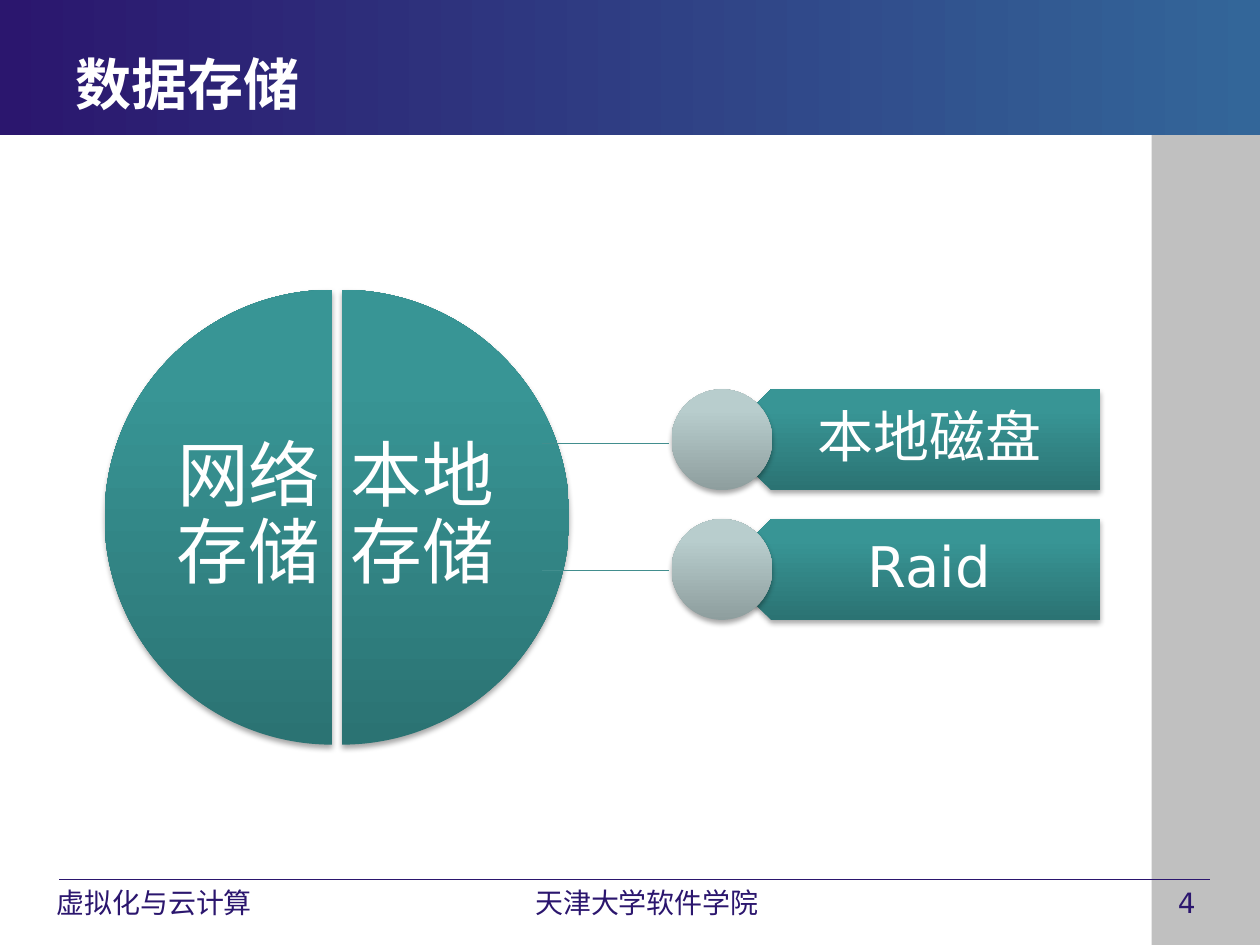
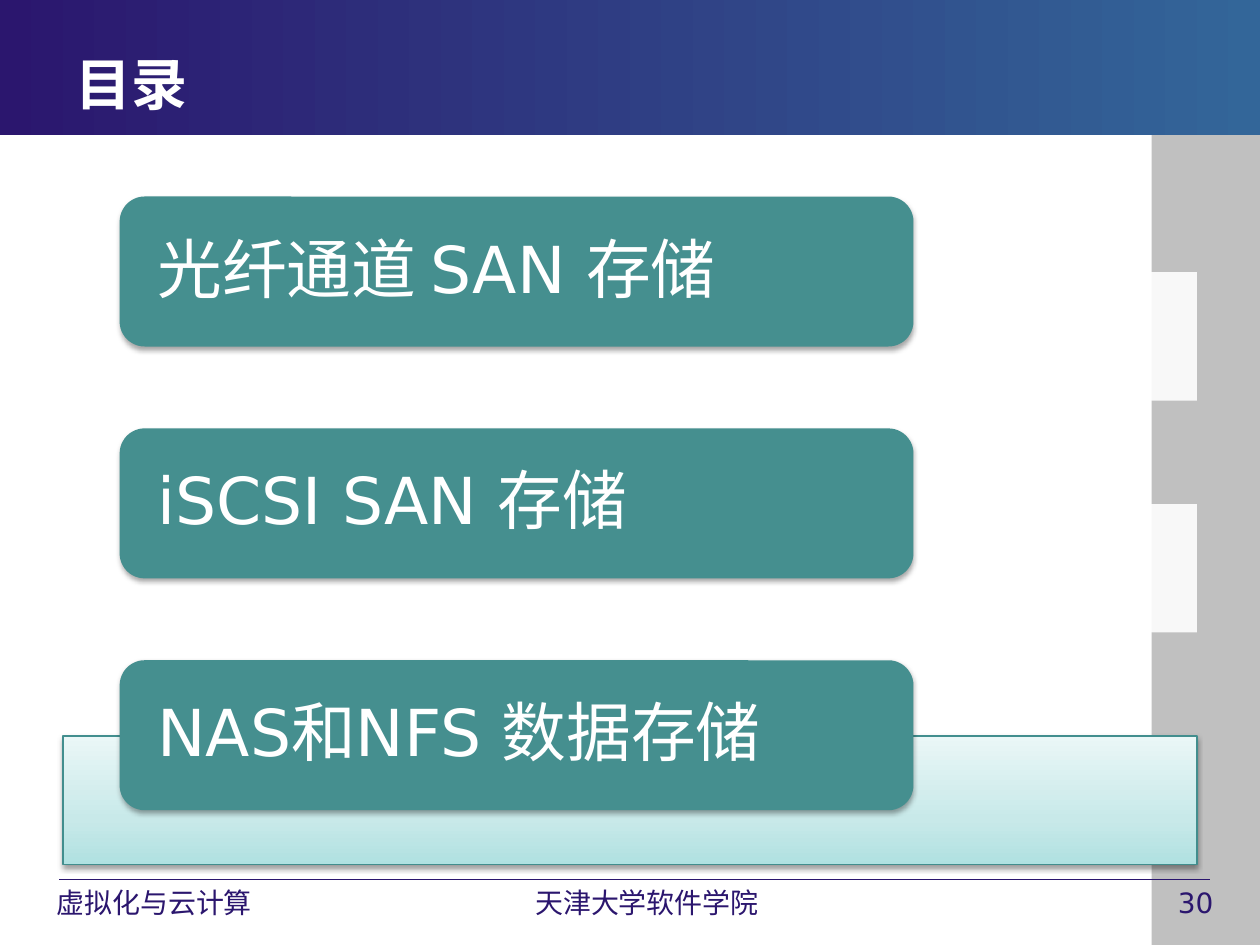
from lxml import etree
from pptx import Presentation
from pptx import util as u
from pptx.dml.color import RGBColor
from pptx.enum import shapes, text
from pptx.oxml import ns

COLORS = {
    "navy": "2B166E", "steel": "336699", "gray": "C0C0C0", "white": "FFFFFF",
    "teal": "458F8F", "teal_line": "428E8E", "black": "000000",
}
BAND_STOPS = [(0, COLORS["navy"]), (100, COLORS["steel"])]
TEAL_STOPS = [(0, "2B7373"), (80, "389595"), (100, "379898")]
SILVER_STOPS = [(0, "8E9E9E"), (80, "B8CDCD"), (100, "B9CECE")]
PALE_STOPS = [(0, "B0E1E1"), (35, "C8E9E9"), (100, "EAF7F7")]
FONT = "DejaVu Sans"
KIND = shapes.MSO_SHAPE
CENTER = text.PP_ALIGN.CENTER


def inches(*lengths):
    """Turn plain numbers into Inches."""
    return [u.Inches(length) for length in lengths]


def color(hex_color):
    """Turn a hex string into an RGB colour."""
    return RGBColor.from_string(hex_color)


def add_color(parent, hex_color, alpha=None):
    """Append a colour element, optionally with an opacity in percent."""
    element = etree.SubElement(parent, ns.qn("a:srgbClr"), val=hex_color)
    if alpha is not None:
        etree.SubElement(element, ns.qn("a:alpha"), val=str(alpha * 1000))


def set_gradient(shape, stops, angle):
    """Fill a shape with a linear gradient of any number of stops."""
    shape.fill.gradient()
    gradient = shape.element.spPr.find(ns.qn("a:gradFill"))
    stop_list = gradient.find(ns.qn("a:gsLst"))
    for stop in list(stop_list):
        stop_list.remove(stop)
    for position, hex_color in stops:
        stop = etree.SubElement(stop_list, ns.qn("a:gs"), pos=str(position * 1000))
        add_color(stop, hex_color)
    gradient.find(ns.qn("a:lin")).set("ang", str(angle * 60000))


def add_shadow(shape, alpha=35, distance=1.8):
    """Give a shape a soft shadow that falls straight down."""
    effects = shape.element.spPr.find(ns.qn("a:effectLst"))
    shadow = etree.SubElement(
        effects, ns.qn("a:outerShdw"), blurRad=str(u.Pt(3.1)), dist=str(u.Pt(distance)),
        dir="5400000", rotWithShape="0")
    add_color(shadow, COLORS["black"], alpha)


def add_block(slide, kind, box, fill, angle=270, shadow=True):
    """Add a shape without outline, filled with one colour or a list of stops."""
    shape = slide.shapes.add_shape(kind, *inches(*box))
    shape.shadow.inherit = False
    shape.line.fill.background()
    if isinstance(fill, str):
        shape.fill.solid()
        shape.fill.fore_color.rgb = color(fill)
    else:
        set_gradient(shape, fill, angle)
    if shadow:
        add_shadow(shape)
    return shape


def add_line(slide, start, end, hex_color):
    """Add a thin straight line."""
    line = slide.shapes.add_connector(shapes.MSO_CONNECTOR.STRAIGHT, *inches(*start, *end))
    line.line.color.rgb = color(hex_color)
    line.line.width = u.Pt(0.75)
    etree.SubElement(line.element.spPr, ns.qn("a:effectLst"))


def add_text(slide, box, words, size, hex_color=COLORS["white"], align=None, bold=False,
             middle=True, insets=(0.1, 0.05, 0.1, 0.05), spacing=None):
    """Add a wrapped text box with one run."""
    frame = slide.shapes.add_textbox(*inches(*box)).text_frame
    frame.word_wrap = True
    frame.vertical_anchor = text.MSO_ANCHOR.MIDDLE if middle else text.MSO_ANCHOR.TOP
    (frame.margin_left, frame.margin_top,
     frame.margin_right, frame.margin_bottom) = inches(*insets)
    paragraph = frame.paragraphs[0]
    paragraph.alignment = align
    paragraph.line_spacing = spacing
    run = paragraph.add_run()
    run.text = words
    run.font.name = FONT
    run.font.size = u.Pt(size)
    run.font.bold = bold
    run.font.color.rgb = color(hex_color)


def add_footer(slide, top, number):
    """Add the footer rule, course, school and page number."""
    add_line(slide, (0.47, top), (9.6, top), COLORS["navy"])
    for left, width, words, align in [
        (9.25, 0.71, str(number), None),
        (0.28, 1.94, "虚拟化与云计算 ", CENTER),
        (4.01, 2.25, "天津大学软件学院", CENTER),
    ]:
        add_text(slide, (left, top, width, 0.35), words, 16, COLORS["navy"], align, middle=False)


def add_base_slide(presentation, title, number):
    """Add a slide with the side band, title band and footer."""
    slide = presentation.slides.add_slide(presentation.slide_layouts[6])
    add_block(slide, KIND.RECTANGLE, (9.14, 1.07, 0.86, 6.43), COLORS["gray"], shadow=False)
    add_block(slide, KIND.RECTANGLE, (0, 0, 10, 1.07), BAND_STOPS, 0, shadow=False)
    add_footer(slide, 6.98, number)
    add_text(slide, (0.5, 0.35, 6.75, 0.62), title, 32, bold=True)
    return slide


def add_split_circle(slide, left, top, size, halves):
    """Add two facing half circles, each with its label."""
    for offset, angles, label_offset, label in halves:
        half = add_block(slide, KIND.PIE, (left + offset, top, size, size), TEAL_STOPS)
        half.adjustments[0], half.adjustments[1] = angles
        add_text(slide, (left + label_offset, top + 0.53, 1.27, 2.54), label, 41,
                 align=CENTER, insets=(0.06,) * 4, spacing=0.9)


def add_branch(slide, left, top, label):
    """Add a left-pointing plate with its label and a silver disc."""
    height = 0.8
    plate = add_block(slide, KIND.PENTAGON, (left + 0.39, top, 3.01, height), TEAL_STOPS)
    plate.element.spPr.find(ns.qn("a:xfrm")).set("flipH", "1")
    add_text(slide, (left + 0.59, top, 2.81, height), label, 32, align=CENTER,
             insets=(0.35, 0.13, 0.25, 0.13), spacing=0.9)
    add_block(slide, KIND.OVAL, (left, top, height, height), SILVER_STOPS)


def add_topic(slide, left, top, label, current):
    """Add an agenda topic over its strip, which is tinted for the current one."""
    strip = add_block(slide, KIND.RECTANGLE, (left, top + 0.6, 9, 1.02),
                      PALE_STOPS if current else COLORS["white"], shadow=False)
    if current:
        strip.line.color.rgb = color(COLORS["teal_line"])
        strip.line.width = u.Pt(0.75)
        add_shadow(strip, 38, 1.6)
    else:
        strip_color = strip.element.spPr.find(ns.qn("a:solidFill"))[0]
        etree.SubElement(strip_color, ns.qn("a:alpha"), val="90000")
    add_block(slide, KIND.ROUNDED_RECTANGLE, (left + 0.45, top, 6.3, 1.19), COLORS["teal"])
    add_text(slide, (left + 0.51, top + 0.06, 6.18, 1.08), label, 37,
             insets=(0.24, 0, 0.24, 0), spacing=0.9)


def build_storage_slide(presentation):
    """Build the slide that splits storage into network and local."""
    slide = add_base_slide(presentation, "数据存储", 4)
    add_split_circle(slide, 0.83, 2.3, 3.61, [
        (0.08, (162, 54), 1.89, "本地存储"),
        (0, (54, 162), 0.51, "网络存储"),
    ])
    for index, label in enumerate(["本地磁盘", "Raid"]):
        add_branch(slide, 5.33, 3.09 + 1.03 * index, label)
        level = 3.52 + 1.01 * index
        add_line(slide, (5.31, level), (4.3, level), COLORS["teal_line"])


def build_agenda_slide(presentation):
    """Build the agenda slide with its last topic marked."""
    slide = add_base_slide(presentation, "目录", 30)
    topics = ["光纤通道 SAN 存储", "iSCSI SAN 存储", "NAS和NFS 数据存储"]
    for index, topic in enumerate(topics):
        add_topic(slide, 0.5, 1.56 + 1.84 * index, topic, topic == topics[-1])


def main():
    """Build and save the presentation."""
    presentation = Presentation()
    presentation.slide_width, presentation.slide_height = inches(10, 7.5)
    build_storage_slide(presentation)
    build_agenda_slide(presentation)
    presentation.save("out.pptx")


if __name__ == "__main__":
    main()
